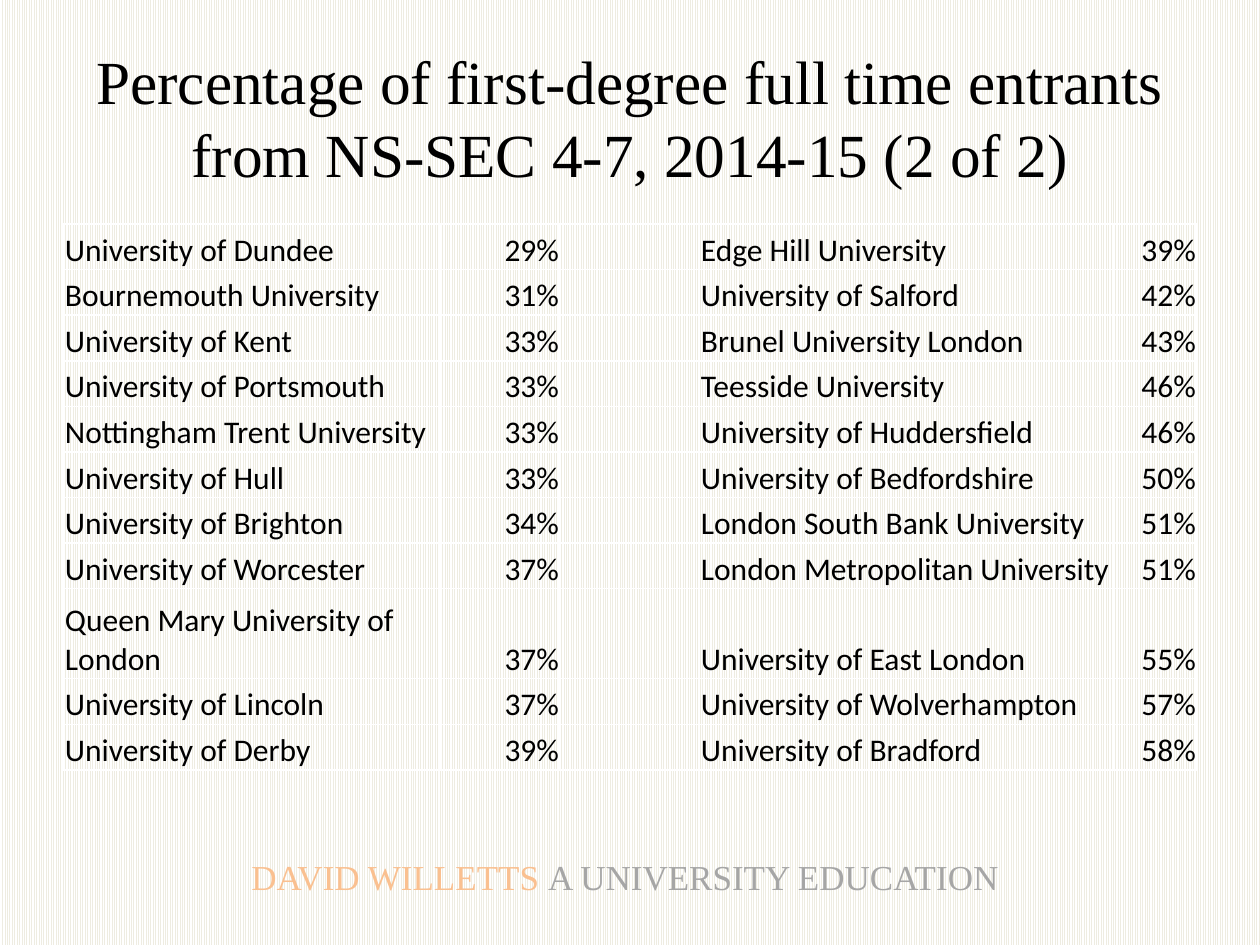
import pptx
import pptx.util
import pptx.dml.color
import pptx.enum.dml
import pptx.enum.text
import pptx.oxml.ns
import lxml.etree

SCALE = 914400 / 126
COLORS = {
    "black": "000000",
    "white": "FFFFFF",
    "cream": "EEECE1",
    "orange": "FAC090",
    "grey": "A6A6A6",
}
ALIGN = pptx.enum.text.PP_ALIGN
ANCHOR = pptx.enum.text.MSO_ANCHOR
ENTRANTS = [
    ("University of Dundee", "29%", "", "Edge Hill University", "39%"),
    ("Bournemouth University", "31%", "", "University of Salford", "42%"),
    ("University of Kent", "33%", "", "Brunel University London", "43%"),
    ("University of Portsmouth", "33%", "", "Teesside University", "46%"),
    ("Nottingham Trent University", "33%", "", "University of Huddersfield", "46%"),
    ("University of Hull", "33%", "", "University of Bedfordshire", "50%"),
    ("University of Brighton", "34%", "", "London South Bank University", "51%"),
    ("University of Worcester", "37%", "", "London Metropolitan University", "51%"),
    ("Queen Mary University of London", "37%", "", "University of East London", "55%"),
    ("University of Lincoln", "37%", "", "University of Wolverhampton", "57%"),
    ("University of Derby", "39%", "", "University of Bradford", "58%"),
]


def px(length):
    return pptx.util.Emu(round(length * SCALE))


def add_run(paragraph, text, size, font, color):
    run = paragraph.add_run()
    run.text = text
    run.font.size = pptx.util.Pt(size)
    run.font.name = font
    run.font.color.rgb = pptx.dml.color.RGBColor.from_string(COLORS[color])


presentation = pptx.Presentation()
presentation.slide_width = px(1260)
presentation.slide_height = px(945)
slide = presentation.slides.add_slide(presentation.slide_layouts[5])

background = slide.background.fill
background.patterned()
background.pattern = pptx.enum.dml.MSO_PATTERN.NARROW_VERTICAL
background.fore_color.rgb = pptx.dml.color.RGBColor.from_string(COLORS["cream"])
background.back_color.rgb = pptx.dml.color.RGBColor.from_string(COLORS["white"])

footer = slide.shapes.add_textbox(px(44), px(849), px(1171), px(131))
footer.text_frame.word_wrap = True
paragraph = footer.text_frame.paragraphs[0]
paragraph.alignment = ALIGN.CENTER
add_run(paragraph, "DAVID WILLETTS ", 20, "Times New Roman", "orange")
add_run(paragraph, "A UNIVERSITY EDUCATION ", 20, "Times New Roman", "grey")

title = slide.shapes.title
title.left, title.top, title.width, title.height = px(63), px(38), px(1134), px(157)
title.text_frame.auto_size = pptx.enum.text.MSO_AUTO_SIZE.NONE
title.text_frame.vertical_anchor = ANCHOR.MIDDLE
paragraph = title.text_frame.paragraphs[0]
paragraph.alignment = ALIGN.CENTER
add_run(
    paragraph,
    "Percentage of first-degree full time entrants from NS-SEC 4-7, 2014-15 (2 of 2)",
    35, "Times New Roman", "black",
)

table_height, tall_row, tall_index = 546, 90, 8
row_height = (table_height - tall_row) / (len(ENTRANTS) - 1)
table = slide.shapes.add_table(
    len(ENTRANTS), 5, px(63), px(224), px(1134), px(table_height)
).table
table.first_row = False
table.horz_banding = False
for column, width in zip(table.columns, (378, 119, 139, 414, 84)):
    column.width = px(width)

for row_index, entries in enumerate(ENTRANTS):
    table.rows[row_index].height = px(tall_row if row_index == tall_index else row_height)
    for column_index, text in enumerate(entries):
        cell = table.cell(row_index, column_index)
        properties = cell._tc.get_or_add_tcPr()
        for side in ("a:lnL", "a:lnR", "a:lnT", "a:lnB"):
            border = lxml.etree.SubElement(properties, pptx.oxml.ns.qn(side), w="12700")
            solid = lxml.etree.SubElement(border, pptx.oxml.ns.qn("a:solidFill"))
            lxml.etree.SubElement(solid, pptx.oxml.ns.qn("a:srgbClr"), val=COLORS["white"])
        cell.fill.background()
        cell.margin_left = px(2)
        cell.margin_right = cell.margin_top = px(1)
        cell.margin_bottom = px(0)
        cell.vertical_anchor = ANCHOR.BOTTOM
        paragraph = cell.text_frame.paragraphs[0]
        paragraph.font.size = pptx.util.Pt(18)
        if text:
            paragraph.alignment = ALIGN.RIGHT if text.endswith("%") else ALIGN.LEFT
            add_run(paragraph, text, 18, "Calibri", "black")

presentation.save("out.pptx")
